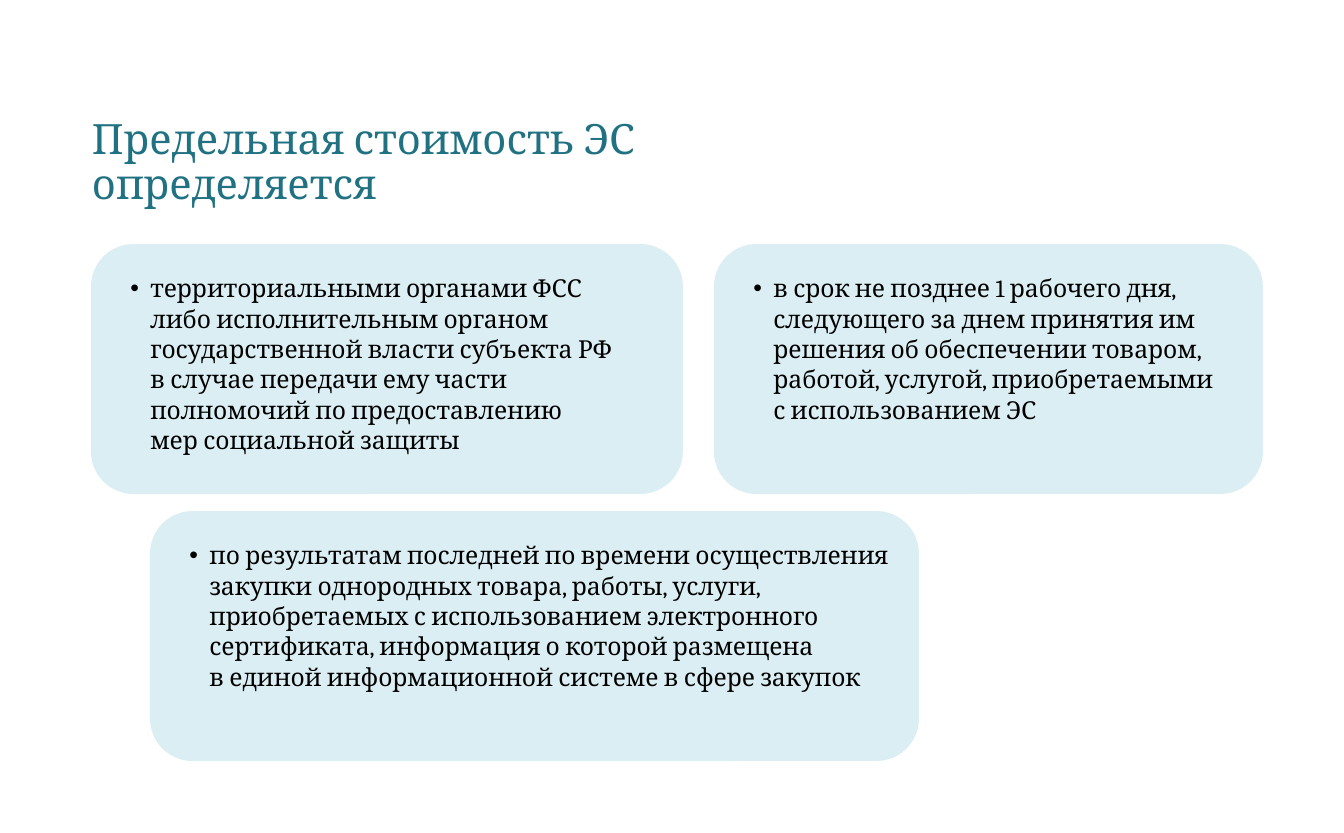
from lxml.etree import SubElement
from pptx import Presentation
from pptx.dml.color import RGBColor
from pptx.enum.shapes import MSO_SHAPE as Shape
from pptx.enum.text import MSO_ANCHOR as Anchor, PP_ALIGN as Align
from pptx.oxml.ns import qn
from pptx.util import Emu, Pt

TEAL = RGBColor(0x20, 0x72, 0x82)
PALE_BLUE = RGBColor(0xDA, 0xEE, 0xF3)
BLACK = RGBColor(0, 0, 0)
FONT = "Cambria"

TITLE = ["Предельная стоимость ЭС", "определяется"]
# left, top, width, lines of text
CARDS = [
    (91, 244, 592, [
        "территориальными органами ФСС",
        "либо исполнительным органом",
        "государственной власти субъекта РФ",
        "в случае передачи ему части",
        "полномочий по предоставлению",
        "мер социальной защиты",
    ]),
    (714, 244, 549, [
        "в срок не позднее 1 рабочего дня,",
        "следующего за днем принятия им",
        "решения об обеспечении товаром,",
        "работой, услугой, приобретаемыми",
        "с использованием ЭС",
    ]),
    (150, 511, 769, [
        "по результатам последней по времени осуществления",
        "закупки однородных товара, работы, услуги,",
        "приобретаемых с использованием электронного",
        "сертификата, информация о которой размещена",
        "в единой информационной системе в сфере закупок",
    ]),
]
CARD_HEIGHT = 250
BULLET_INDENT = 20


def px(length):
    return Emu(round(length * 914400 / 136.6))


def write(box, lines, size, color, anchor, spacing, insets):
    """Fill the box with one paragraph, broken into the given lines."""
    frame = box.text_frame
    frame.word_wrap = True
    frame.vertical_anchor = anchor
    (frame.margin_left, frame.margin_top,
     frame.margin_right, frame.margin_bottom) = map(px, insets)
    para = frame.paragraphs[0]
    para.alignment = Align.LEFT
    para.line_spacing = spacing
    for number, line in enumerate(lines):
        if number:
            para.add_line_break()
        span = para.add_run()
        span.text = line
        span.font.name = FONT
        span.font.size = Pt(size)
        span.font.color.rgb = color
    return para


def add_bullet(para):
    props = para._p.get_or_add_pPr()
    props.set("marL", str(px(BULLET_INDENT)))
    props.set("indent", str(-px(BULLET_INDENT)))
    color = SubElement(props, qn("a:buClr"))
    SubElement(color, qn("a:srgbClr")).set("val", str(BLACK))
    SubElement(props, qn("a:buFont")).set("typeface", "Arial")
    SubElement(props, qn("a:buChar")).set("char", "•")


def add_card(page, left, top, width, lines):
    card = page.shapes.add_shape(
        Shape.ROUNDED_RECTANGLE, px(left), px(top), px(width), px(CARD_HEIGHT))
    card.adjustments[0] = 0.17
    card.shadow.inherit = False
    card.fill.solid()
    card.fill.fore_color.rgb = PALE_BLUE
    card.line.fill.background()
    add_bullet(write(card, lines, size=13, color=BLACK, anchor=Anchor.TOP,
                     spacing=Pt(16), insets=(27, 16, 14, 7)))


def main():
    deck = Presentation()
    deck.slide_width, deck.slide_height = px(1344), px(833)
    page = deck.slides.add_slide(deck.slide_layouts[6])
    title = page.shapes.add_textbox(px(78), px(94), px(1210), px(139))
    write(title, TITLE, size=22, color=TEAL, anchor=Anchor.MIDDLE,
          spacing=0.9, insets=(14, 7, 14, 7))
    for card in CARDS:
        add_card(page, *card)
    deck.save("out.pptx")


if __name__ == "__main__":
    main()
